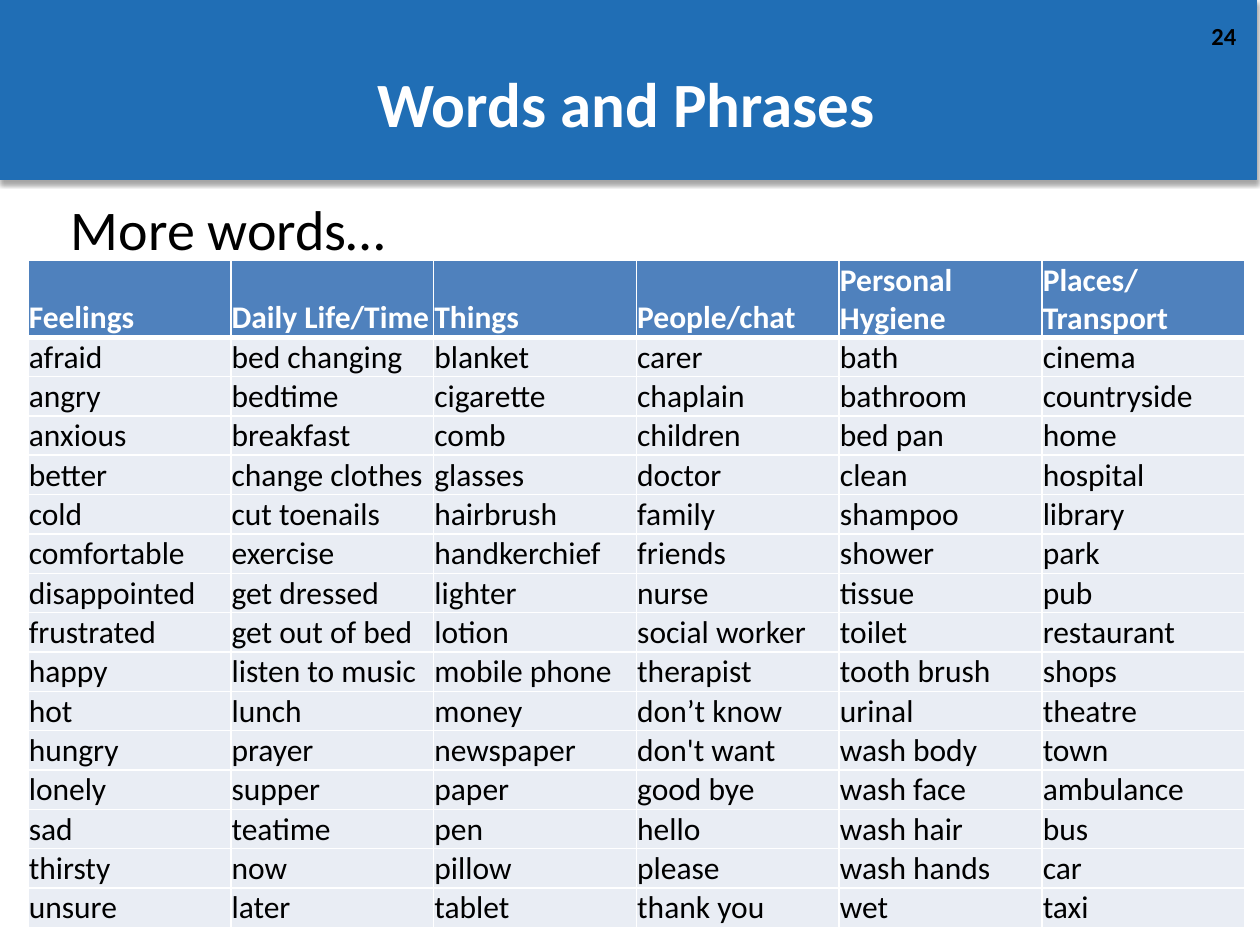
import pptx
import pptx.dml.color
import pptx.enum.shapes
import pptx.enum.text
import pptx.oxml
import pptx.oxml.ns
import pptx.util
from dataclasses import dataclass

Pt = pptx.util.Pt
ALIGN = pptx.enum.text.PP_ALIGN
ANCHOR = pptx.enum.text.MSO_ANCHOR


@dataclass(frozen=True)
class Theme:
    font: str = "Calibri"
    banner: str = "206EB5"
    header: str = "4F81BD"
    body: str = "E9EDF4"
    white: str = "FFFFFF"
    black: str = "000000"
    title_size: float = 36
    subtitle_size: float = 32
    table_size: float = 18
    number_size: float = 14


THEME = Theme()

HEADINGS = ["Feelings", "Daily Life/Time", "Things", "People/chat",
            "Personal Hygiene", "Places/\nTransport"]
WORDS = [
    ["afraid", "bed changing", "blanket", "carer", "bath", "cinema"],
    ["angry", "bedtime", "cigarette", "chaplain", "bathroom", "countryside"],
    ["anxious", "breakfast", "comb", "children", "bed pan", "home"],
    ["better", "change clothes", "glasses", "doctor", "clean", "hospital"],
    ["cold", "cut toenails", "hairbrush", "family", "shampoo", "library"],
    ["comfortable", "exercise", "handkerchief", "friends", "shower", "park"],
    ["disappointed", "get dressed", "lighter", "nurse", "tissue", "pub"],
    ["frustrated", "get out of bed", "lotion", "social worker", "toilet", "restaurant"],
    ["happy", "listen to music", "mobile phone", "therapist", "tooth brush", "shops"],
    ["hot", "lunch", "money", "don’t know", "urinal", "theatre"],
    ["hungry", "prayer", "newspaper", "don't want", "wash body", "town"],
    ["lonely", "supper", "paper", "good bye", "wash face", "ambulance"],
    ["sad", "teatime", "pen", "hello", "wash hair", "bus"],
    ["thirsty", "now", "pillow", "please", "wash hands", "car"],
    ["unsure", "later", "tablet", "thank you", "wet", "taxi"],
]


def rgb(color):
    return pptx.dml.color.RGBColor.from_string(color)


def style_text(frame, size, color, bold=False, align=ALIGN.LEFT):
    for paragraph in frame.paragraphs:
        paragraph.alignment = align
        font = paragraph.font
        font.name, font.size, font.bold = THEME.font, Pt(size), bold
        font.color.rgb = rgb(color)


def add_text(slide, box, text, size, color, bold=False, align=ALIGN.LEFT,
             anchor=ANCHOR.TOP, indent=7.2):
    frame = slide.shapes.add_textbox(*map(Pt, box)).text_frame
    frame.word_wrap = True
    frame.vertical_anchor = anchor
    frame.margin_left = Pt(indent)
    frame.text = text
    style_text(frame, size, color, bold, align)


def add_banner(slide, box):
    banner = slide.shapes.add_shape(
        pptx.enum.shapes.MSO_SHAPE.RECTANGLE, *map(Pt, box))
    banner.fill.solid()
    banner.fill.fore_color.rgb = rgb(THEME.banner)
    banner.line.color.rgb = rgb(THEME.banner)
    banner.line.width = Pt(0.75)
    # Soft shadow straight below the banner
    banner.shadow.inherit = False
    effects = banner._element.spPr.find(pptx.oxml.ns.qn("a:effectLst"))
    effects.append(pptx.oxml.parse_xml(
        f'<a:outerShdw {pptx.oxml.ns.nsdecls("a")} blurRad="{Pt(3.1)}" '
        f'dist="{Pt(1.8)}" dir="5400000" rotWithShape="0">'
        f'<a:srgbClr val="{THEME.black}"><a:alpha val="35000"/></a:srgbClr>'
        '</a:outerShdw>'))


def set_borders(cell, top, bottom):
    for side, width in {"L": 1, "R": 1, "T": top, "B": bottom}.items():
        cell._tc.get_or_add_tcPr().append(pptx.oxml.parse_xml(
            f'<a:ln{side} {pptx.oxml.ns.nsdecls("a")} w="{Pt(width)}">'
            f'<a:solidFill><a:srgbClr val="{THEME.white}"/></a:solidFill>'
            f'</a:ln{side}>'))


def fill_cell(cell, text, row):
    is_heading = row == 0
    cell.text = text
    cell.vertical_anchor = ANCHOR.BOTTOM
    cell.margin_left = cell.margin_right = cell.margin_top = Pt(0.5)
    cell.margin_bottom = 0
    # A thick rule divides the headings from the words
    set_borders(cell, top=3 if row == 1 else 1, bottom=3 if is_heading else 1)
    cell.fill.solid()
    cell.fill.fore_color.rgb = rgb(THEME.header if is_heading else THEME.body)
    style_text(cell.text_frame, THEME.table_size,
               THEME.white if is_heading else THEME.black, is_heading)


def add_word_table(slide, left, top, column_width, header_height, row_height):
    rows = [HEADINGS] + WORDS
    table = slide.shapes.add_table(
        len(rows), len(HEADINGS), Pt(left), Pt(top),
        Pt(column_width * len(HEADINGS)),
        Pt(header_height + row_height * len(WORDS))).table
    for column in table.columns:
        column.width = Pt(column_width)
    for r, words in enumerate(rows):
        table.rows[r].height = Pt(row_height if r else header_height)
        for c, word in enumerate(words):
            fill_cell(table.cell(r, c), word, r)


def main():
    deck = pptx.Presentation()
    deck.slide_width, deck.slide_height = Pt(720), Pt(540)
    slide = deck.slides.add_slide(deck.slide_layouts[6])

    # Banner and slide number
    add_banner(slide, (0, 0, 718, 102.5))
    add_text(slide, (684, 8.5, 29.5, 29), "24", THEME.number_size,
             THEME.black, bold=True, align=ALIGN.RIGHT, indent=0)

    # Word lists
    add_word_table(slide, left=16, top=149, column_width=115.9,
                   header_height=42, row_height=22.5)

    # Subtitle and title
    add_text(slide, (11.5, 107.5, 703, 351), "More words…",
             THEME.subtitle_size, THEME.black, indent=29)
    add_text(slide, (36, 37.5, 643.5, 42), "Words and Phrases",
             THEME.title_size, THEME.white, bold=True, align=ALIGN.CENTER,
             anchor=ANCHOR.MIDDLE)

    deck.save("out.pptx")


if __name__ == "__main__":
    main()
